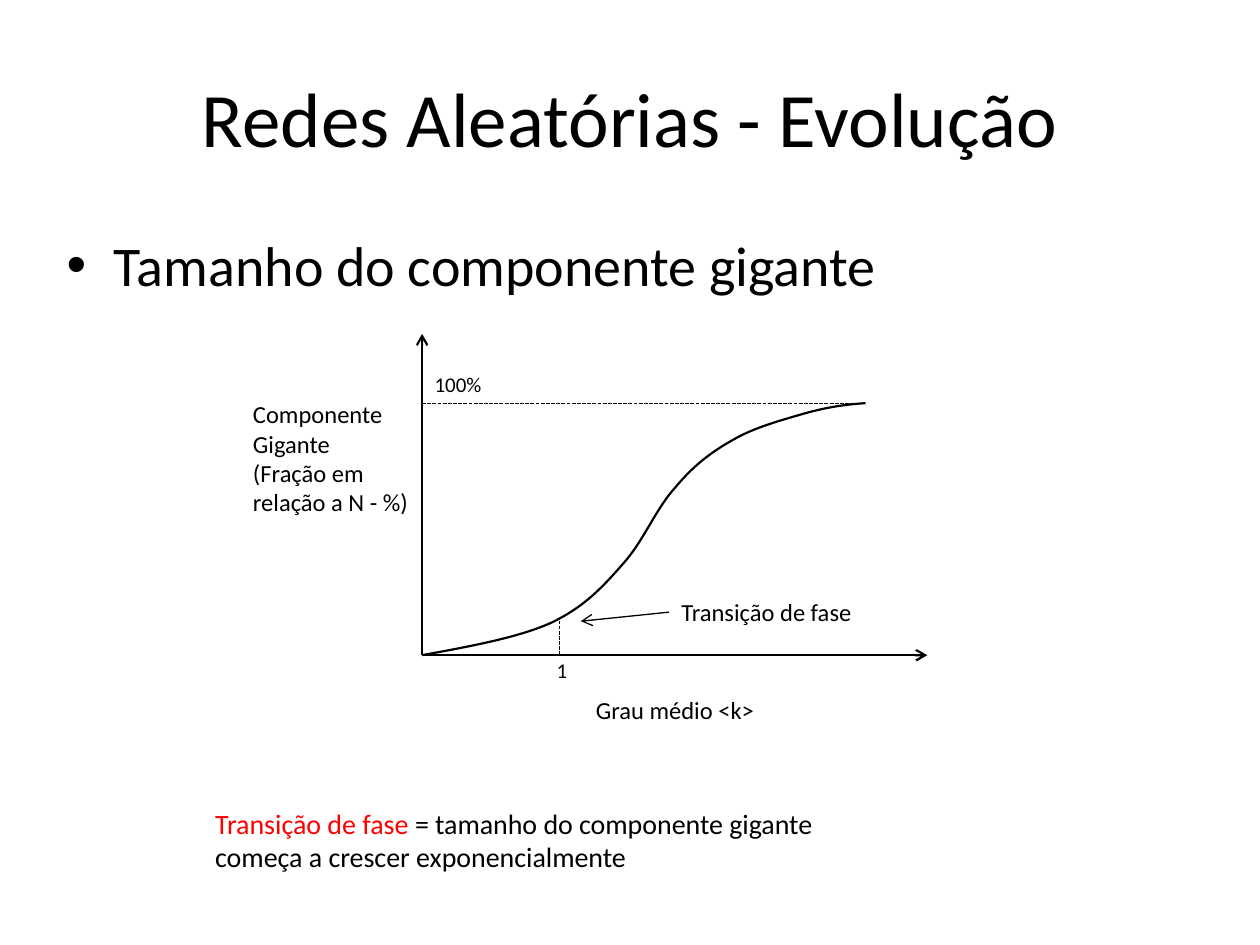
from dataclasses import dataclass
from lxml.etree import SubElement
from pptx import Presentation
from pptx.dml.color import RGBColor
from pptx.enum.dml import MSO_LINE
from pptx.enum.shapes import MSO_CONNECTOR
from pptx.enum.text import MSO_ANCHOR, MSO_AUTO_SIZE, PP_ALIGN
from pptx.oxml.ns import qn
from pptx.shapes.autoshape import Shape
from pptx.shapes.connector import Connector
from pptx.shapes.shapetree import SlideShapes
from pptx.util import Pt


@dataclass(frozen=True)
class Theme:
    font: str = "Calibri"
    ink: RGBColor = RGBColor(0, 0, 0)
    red: RGBColor = RGBColor(255, 0, 0)
    title: float = 44
    body: float = 32
    note: float = 16
    label: float = 14
    tick: float = 12
    thick: float = 1.25
    thin: float = 0.75


@dataclass(frozen=True)
class Label:
    left: float
    top: float
    width: float
    height: float
    size: float
    lines: tuple[str, ...]
    wrap: bool = False
    grow: bool = True


@dataclass(frozen=True)
class Line:
    start: tuple[float, float]
    end: tuple[float, float]
    width: float
    arrow: bool = False
    dash: bool = False


THEME = Theme()
LEFT, BASE, FULL, END = 241.2, 374.4, 230.4, 494.6
PHASE = 319.7

TITLE = Label(36, 21.6, 648, 90, THEME.title,
              ("Redes Aleatórias - Evolução",), True, False)
BODY = Label(31, 128.2, 648, 376.6, THEME.body,
             ("Tamanho do componente gigante",), True, False)
NOTE = Label(115.9, 457.2, 362.9, 46.1, THEME.note, ("",), True)
CALL = Label(382.3, 337.6, 113, 24.4, THEME.label, ("Transição de fase",))
LABELS = (
    Label(333.4, 393.8, 105.8, 24.4, THEME.label, ("Grau médio <k>",)),
    Label(137.5, 224.6, 113, 97.2, THEME.label,
          ("Componente", "Gigante", "(Fração em relação a N - %)"), True),
    Label(311, 372.2, 20.9, 21.6, THEME.tick, ("1",)),
    Label(LEFT, 208.8, 41.8, 21.6, THEME.tick, ("100%",)),
)
LINES = (
    Line((LEFT, BASE), (LEFT, 190.8), THEME.thick, arrow=True),
    Line((LEFT, BASE), (529.9, BASE), THEME.thick, arrow=True),
    Line((LEFT, FULL), (END, FULL), THEME.thin, dash=True),
    Line((PHASE, BASE), (PHASE, 355), THEME.thin, dash=True),
)
ARROW = Line((CALL.left, CALL.top + CALL.height / 2), (331.9, 355),
             THEME.thin, arrow=True)
CURVE = (
    (268.6, 369.4), (296.6, 364.3), (315.4, 355.7),
    (334.8, 346.3), (344.9, 334.8), (356.4, 321.8),
    (367.9, 308.9), (375.1, 290.2), (385.9, 278.6),
    (396, 266.4), (406.1, 258.5), (419, 251.3),
    (431.3, 244.1), (447.8, 239.8), (460.1, 236.2),
    (473, 232.6), (483.8, 231.1), (END, FULL),
)


def add_label(shapes: SlideShapes, item: Label) -> Shape:
    box = shapes.add_textbox(Pt(item.left), Pt(item.top),
                             Pt(item.width), Pt(item.height))
    frame = box.text_frame
    frame.text = "\n".join(item.lines)
    frame.word_wrap = item.wrap
    frame.auto_size = (MSO_AUTO_SIZE.SHAPE_TO_FIT_TEXT if item.grow
                       else MSO_AUTO_SIZE.NONE)
    for para in frame.paragraphs:
        para.font.name = THEME.font
        para.font.size = Pt(item.size)
        para.font.color.rgb = THEME.ink
    return box


def add_line(shapes: SlideShapes, item: Line) -> Connector:
    line = shapes.add_connector(
        MSO_CONNECTOR.STRAIGHT,
        *(Pt(value) for value in (*item.start, *item.end)))
    line.line.width = Pt(item.width)
    line.line.color.rgb = THEME.ink
    if item.dash:
        line.line.dash_style = MSO_LINE.SQUARE_DOT
    if item.arrow:
        SubElement(line._element.spPr.find(qn("a:ln")), qn("a:tailEnd"),
                   type="arrow")
    SubElement(line._element.spPr, qn("a:effectLst"))
    return line


def add_curve(shapes: SlideShapes) -> Shape:
    form = shapes.build_freeform(Pt(LEFT), Pt(BASE))
    form.add_line_segments([(Pt(x), Pt(y)) for x, y in CURVE], close=False)
    curve = form.convert_to_shape()
    curve.shadow.inherit = False
    curve.fill.background()
    curve.line.color.rgb = THEME.ink
    curve.line.width = Pt(THEME.thick)
    track = next(curve._element.iter(qn("a:path")))
    steps = iter(track.findall(qn("a:lnTo")))
    for group in zip(steps, steps, steps):
        bend = SubElement(track, qn("a:cubicBezTo"))
        for step in group:
            bend.append(step[0])
            track.remove(step)
    return curve


def add_bullet(shapes: SlideShapes) -> None:
    para = add_label(shapes, BODY).text_frame.paragraphs[0]
    para.space_before = Pt(6.4)
    props = para._p.get_or_add_pPr()
    props.set("marL", str(Pt(27)))
    props.set("indent", str(Pt(-27)))
    mark = props.makeelement(qn("a:buChar"), {"char": "•"})
    face = props.makeelement(qn("a:buFont"), {"typeface": "Arial"})
    props.find(qn("a:defRPr")).addprevious(face)
    face.addnext(mark)


def add_note(shapes: SlideShapes) -> None:
    para = add_label(shapes, NOTE).text_frame.paragraphs[0]
    term = para.add_run()
    term.text = "Transição de fase "
    term.font.color.rgb = THEME.red
    para.add_run().text = ("= tamanho do componente gigante "
                           "começa a crescer exponencialmente")


def main() -> None:
    deck = Presentation()
    deck.slide_width, deck.slide_height = Pt(720), Pt(540)
    shapes = deck.slides.add_slide(deck.slide_layouts[6]).shapes
    frame = add_label(shapes, TITLE).text_frame
    frame.vertical_anchor = MSO_ANCHOR.MIDDLE
    frame.paragraphs[0].alignment = PP_ALIGN.CENTER
    add_bullet(shapes)
    add_curve(shapes)
    for line in LINES:
        add_line(shapes, line)
    for label in LABELS:
        add_label(shapes, label)
    call = add_label(shapes, CALL)
    add_line(shapes, ARROW).begin_connect(call, 1)
    add_note(shapes)
    deck.save("out.pptx")


if __name__ == "__main__":
    main()
